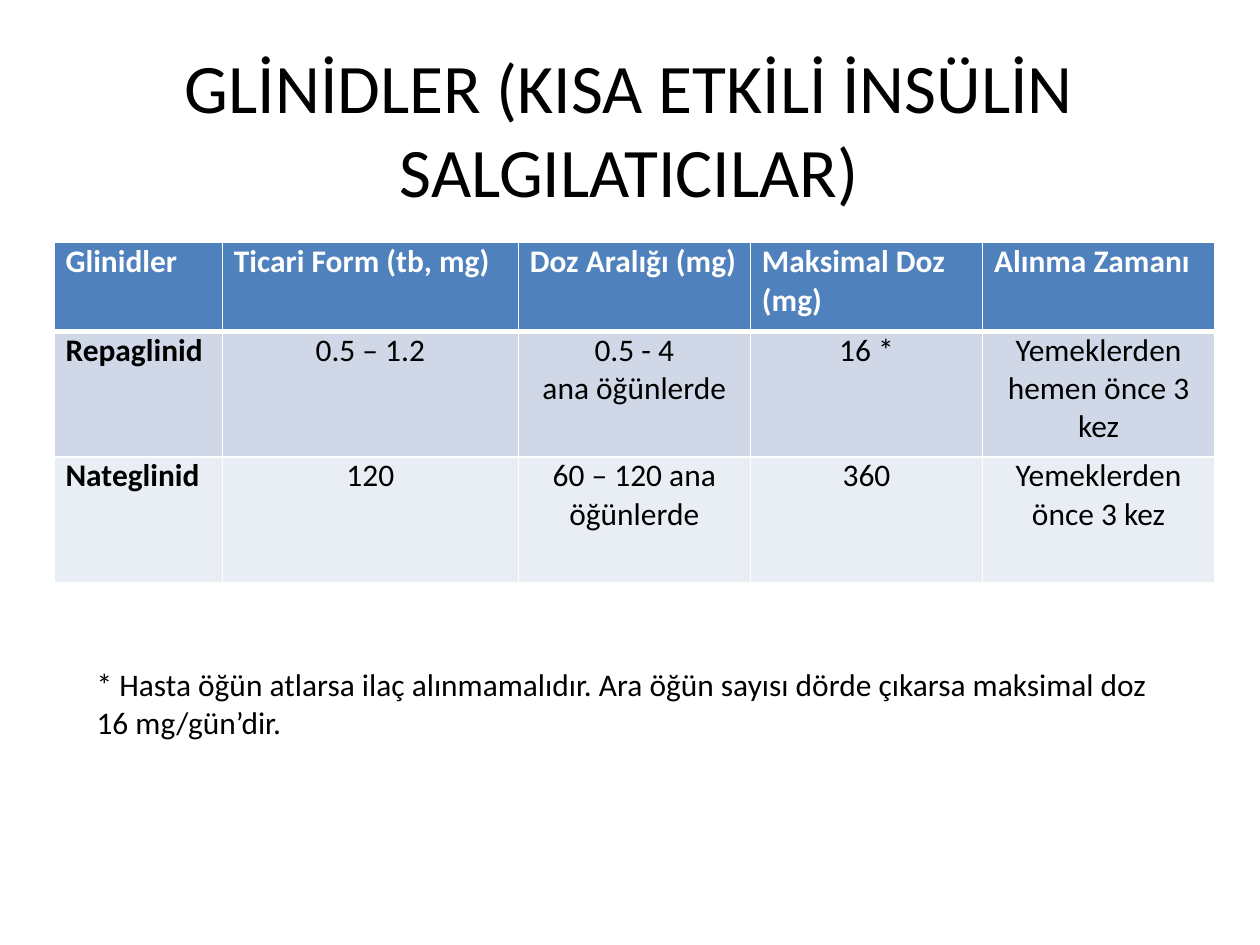
import pptx
import pptx.dml.color
import pptx.enum.text
import pptx.oxml
import pptx.oxml.ns
import pptx.util
from pptx.util import Inches

BLACK = pptx.dml.color.RGBColor(0x00, 0x00, 0x00)
WHITE = pptx.dml.color.RGBColor(0xFF, 0xFF, 0xFF)
HEADER_BLUE = pptx.dml.color.RGBColor(0x4F, 0x81, 0xBD)
BAND_FILLS = [
    pptx.dml.color.RGBColor(0xD0, 0xD8, 0xE8),
    pptx.dml.color.RGBColor(0xE9, 0xED, 0xF4),
]
LEFT = pptx.enum.text.PP_ALIGN.LEFT
CENTER = pptx.enum.text.PP_ALIGN.CENTER
FONT = "Calibri"
BODY_SIZE = 25.5
THIN, THICK = 1.42, 4.27

COLUMN_WIDTHS = [1.9, 3.34, 2.62, 2.62, 2.62]
ROW_HEIGHTS = [1, 1.42, 1.42]
GLINIDES = [
    ["Glinidler", "Ticari Form (tb, mg)", "Doz Aralığı (mg)",
     "Maksimal Doz (mg)", "Alınma Zamanı"],
    ["Repaglinid", "0.5 – 1.2", "0.5 - 4\nana öğünlerde", "16 *",
     "Yemeklerden hemen önce 3 kez"],
    ["Nateglinid", "120", "60 – 120 ana öğünlerde", "360",
     "Yemeklerden\nönce 3 kez"],
]


def write_text(frame, text, size, align=LEFT, color=BLACK, bold=False):
    """Fill a text frame, one paragraph for each line."""
    frame.text = text
    for paragraph in frame.paragraphs:
        paragraph.alignment = align
        paragraph.font.name = FONT
        paragraph.font.size = pptx.util.Pt(size)
        paragraph.font.bold = bold
        paragraph.font.color.rgb = color


def add_text(slide, left, top, width, height, text, size, align=LEFT):
    box = slide.shapes.add_textbox(
        Inches(left), Inches(top), Inches(width), Inches(height))
    frame = box.text_frame
    frame.margin_left = frame.margin_right = 0
    frame.margin_top = frame.margin_bottom = 0
    frame.word_wrap = True
    frame.auto_size = pptx.enum.text.MSO_AUTO_SIZE.SHAPE_TO_FIT_TEXT
    write_text(frame, text, size, align)


def set_borders(cell, top, bottom):
    """Draw white cell borders; widths are in points."""
    properties = cell._tc.get_or_add_tcPr()
    namespace = pptx.oxml.ns.nsdecls("a")
    widths = {"lnL": THIN, "lnR": THIN, "lnT": top, "lnB": bottom}
    for side, width in widths.items():
        properties.append(pptx.oxml.parse_xml(
            f'<a:{side} {namespace} w="{pptx.util.Pt(width)}"><a:solidFill>'
            f'<a:srgbClr val="{WHITE}"/></a:solidFill></a:{side}>'))


def fill_cell(cell, text, row, column):
    is_header = row == 0
    is_name = column == 0
    centered = not is_header and not is_name
    cell.margin_left = Inches(0.13)
    cell.margin_right = Inches(0.13) if centered else 0
    cell.margin_top = cell.margin_bottom = 0
    set_borders(cell, top=THICK if row == 1 else THIN,
                bottom=THICK if is_header else THIN)
    cell.fill.solid()
    cell.fill.fore_color.rgb = HEADER_BLUE if is_header else BAND_FILLS[row - 1]
    write_text(cell.text_frame, text, BODY_SIZE,
               align=CENTER if centered else LEFT,
               color=WHITE if is_header else BLACK,
               bold=is_header or is_name)


def add_dose_table(slide, left, top):
    table = slide.shapes.add_table(
        len(ROW_HEIGHTS), len(COLUMN_WIDTHS), Inches(left), Inches(top),
        Inches(sum(COLUMN_WIDTHS)), Inches(sum(ROW_HEIGHTS))).table
    table.horz_banding = False
    for column, width in zip(table.columns, COLUMN_WIDTHS):
        column.width = Inches(width)
    for row, height in zip(table.rows, ROW_HEIGHTS):
        row.height = Inches(height)
    for row, texts in enumerate(GLINIDES):
        for column, text in enumerate(texts):
            fill_cell(table.cell(row, column), text, row, column)


def main():
    presentation = pptx.Presentation()
    presentation.slide_width = Inches(14.22)
    presentation.slide_height = Inches(10.67)
    slide = presentation.slides.add_slide(presentation.slide_layouts[6])

    # Title
    add_text(slide, 2.04, 0.5, 10.13, 1.77,
             "GLİNİDLER (KISA ETKİLİ İNSÜLİN\nSALGILATICILAR)", 56.5, CENTER)

    # Dose table
    add_dose_table(slide, 0.61, 2.74)

    # Footnote to the maximum dose
    add_text(slide, 1.09, 7.51, 11.9, 0.81,
             "* Hasta öğün atlarsa ilaç alınmamalıdır. Ara öğün sayısı dörde "
             "çıkarsa maksimal doz\n16 mg/gün’dir.", BODY_SIZE)

    presentation.save("out.pptx")


if __name__ == "__main__":
    main()
